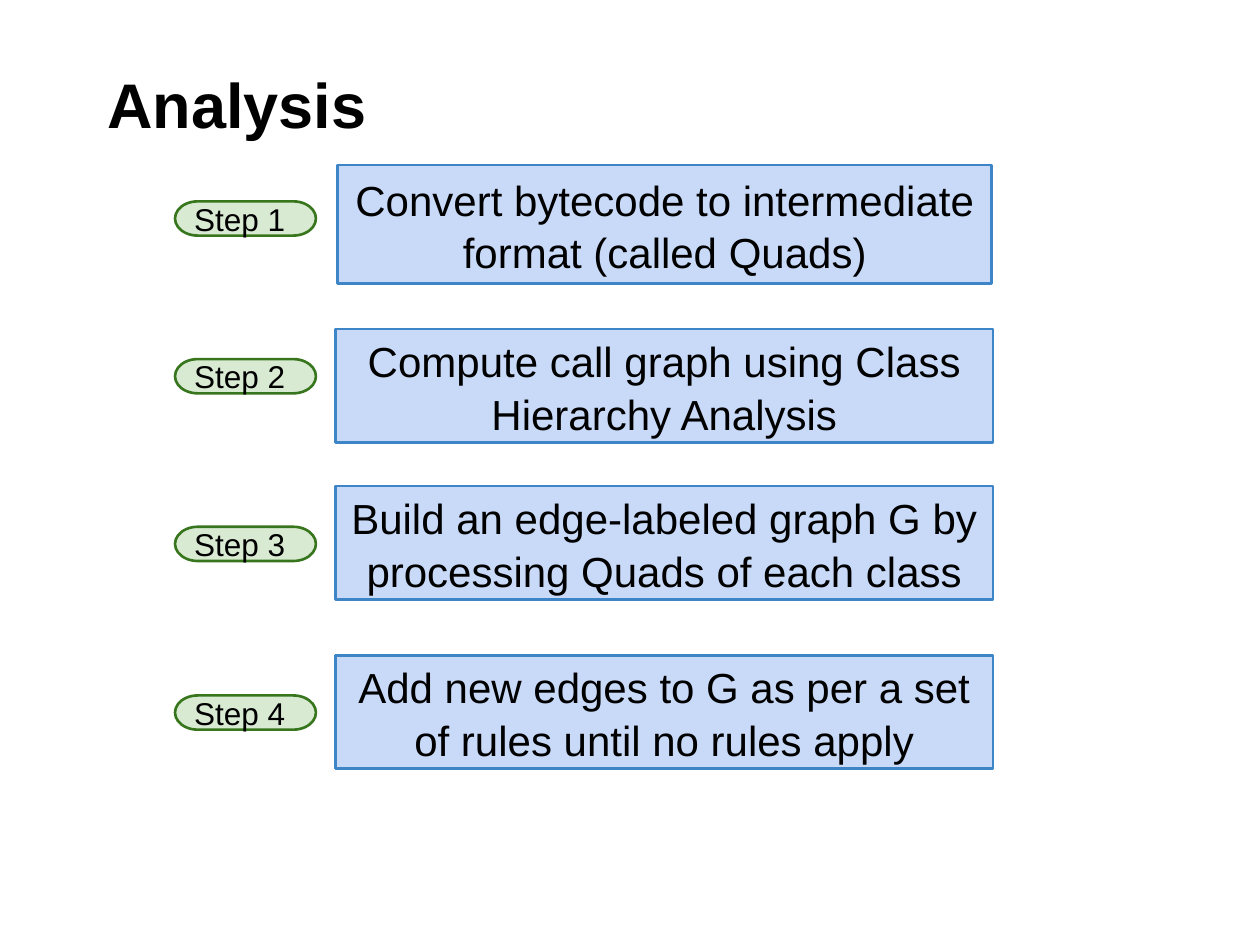
from pptx import Presentation
from pptx.dml.color import RGBColor
from pptx.enum.shapes import MSO_SHAPE
from pptx.enum.text import MSO_ANCHOR, MSO_AUTO_SIZE, PP_ALIGN
from pptx.util import Cm, Pt

BLACK = RGBColor(0x00, 0x00, 0x00)
BLUE_FILL = RGBColor(0xC9, 0xDA, 0xF8)
BLUE_LINE = RGBColor(0x3D, 0x85, 0xC6)
GREEN_FILL = RGBColor(0xD9, 0xEA, 0xD3)
GREEN_LINE = RGBColor(0x38, 0x76, 0x1D)
INSET = Cm(0.25)


def write(target, text, size, bold=False, align=PP_ALIGN.LEFT,
          anchor=MSO_ANCHOR.MIDDLE, left_inset=INSET, spacing=None):
    frame = target.text_frame
    frame.word_wrap = True
    frame.auto_size = MSO_AUTO_SIZE.NONE
    frame.vertical_anchor = anchor
    frame.margin_left = left_inset
    frame.margin_right = frame.margin_top = frame.margin_bottom = INSET
    paragraph = frame.paragraphs[0]
    paragraph.alignment = align
    paragraph.line_spacing = spacing
    run = paragraph.add_run()
    run.text = text
    run.font.name = "Arial"
    run.font.size = Pt(size)
    run.font.bold = bold
    run.font.color.rgb = BLACK


def add_outlined(kind, left, top, width, height, fill, line):
    shape = slide.shapes.add_shape(kind, Cm(left), Cm(top), Cm(width), Cm(height))
    shape.shadow.inherit = False
    shape.fill.solid()
    shape.fill.fore_color.rgb = fill
    shape.line.color.rgb = line
    shape.line.width = Pt(1.5)
    return shape


presentation = Presentation()
presentation.slide_width = Cm(25.4)
presentation.slide_height = Cm(19.05)
slide = presentation.slides.add_slide(presentation.slide_layouts[5])

heading = slide.shapes.title
heading.left, heading.top = Cm(1.27), Cm(-0.08)
heading.width, heading.height = Cm(22.86), Cm(3.18)
write(heading, "Analysis", 36, bold=True, anchor=MSO_ANCHOR.BOTTOM,
      left_inset=Cm(0.89))

# Each step: description, its box (left, top, width, height), top of its label
steps = [
    ("Convert bytecode to intermediate format (called Quads)",
     (6.81, 3.33, 13.18, 2.39), 4.06),
    ("Compute call graph using Class Hierarchy Analysis",
     (6.76, 6.63, 13.26, 2.29), 7.24),
    ("Build an edge-labeled graph G by processing Quads of each class",
     (6.76, 9.8, 13.26, 2.29), 10.62),
    ("Add new edges to G as per a set of rules until no rules apply",
     (6.76, 13.21, 13.26, 2.29), 14.02),
]
for number, (description, box, label_top) in enumerate(steps, start=1):
    action = add_outlined(MSO_SHAPE.RECTANGLE, *box, BLUE_FILL, BLUE_LINE)
    write(action, description, 24, align=PP_ALIGN.CENTER, spacing=1.05)
    label = add_outlined(MSO_SHAPE.FLOWCHART_TERMINATOR, 3.53, label_top,
                         2.84, 0.69, GREEN_FILL, GREEN_LINE)
    write(label, f"Step {number}", 18)

presentation.save("out.pptx")
